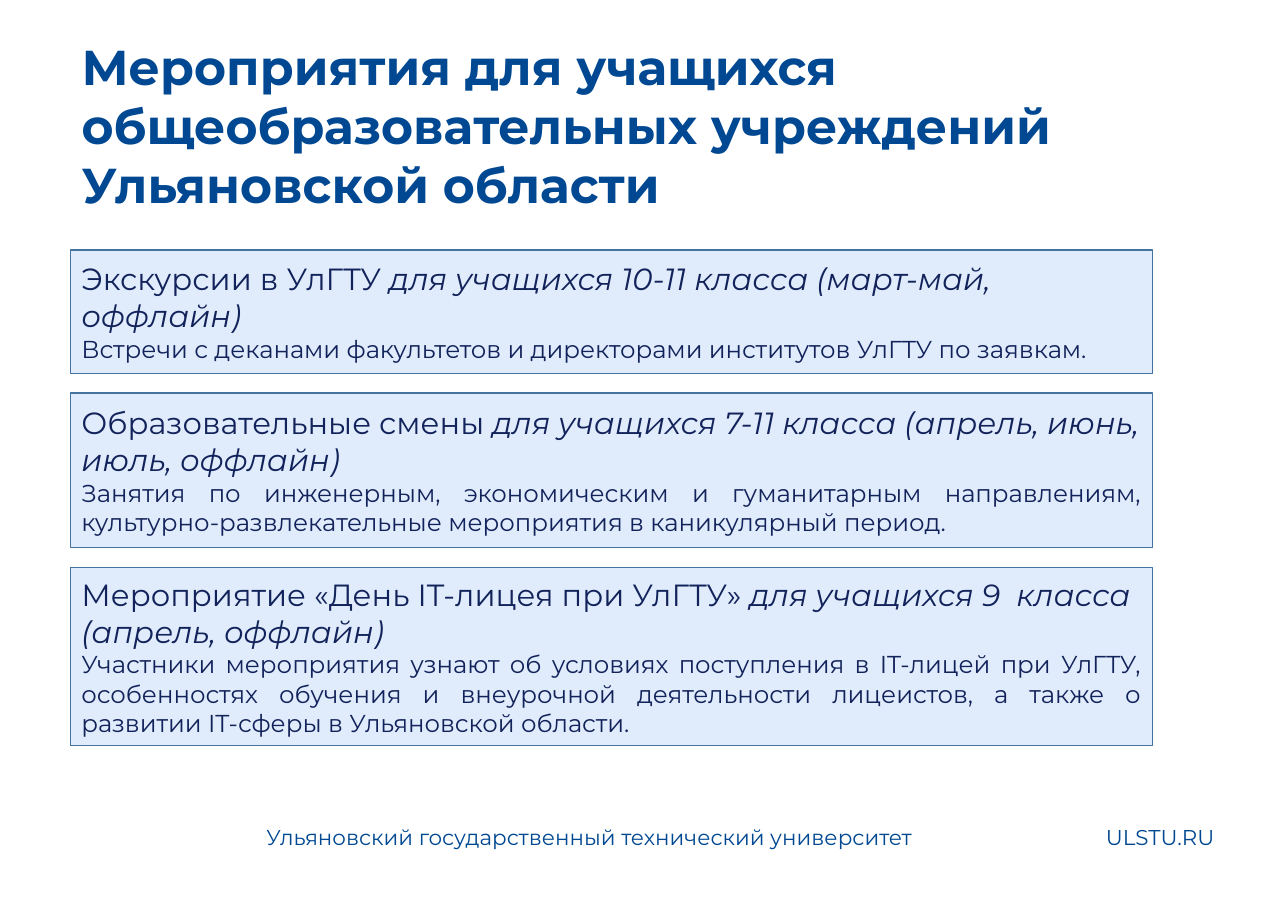
from dataclasses import dataclass

from lxml import etree
from pptx import Presentation
from pptx.dml.color import RGBColor
from pptx.enum.shapes import MSO_SHAPE
from pptx.enum.text import MSO_ANCHOR as ANCHOR, MSO_AUTO_SIZE as AUTO, PP_ALIGN as ALIGN
from pptx.oxml.ns import qn
from pptx.util import Pt


@dataclass(frozen=True)
class Theme:
    font: str = "Montserrat"
    brand: str = "004892"
    ink: str = "12225A"
    card: str = "9AC3F5"
    card_opacity: int = 30
    border: str = "43739E"
    title_size: int = 32
    heading_size: int = 20
    detail_size: int = 16
    footer_size: int = 14


THEME = Theme()
LEFT, CARD_TOP, CARD_WIDTH, CARD_GAP = 46.1, 163.4, 707.1, 13
FOOTER_TOP, FOOTER_HEIGHT = 535, 28

TITLE = "Мероприятия для учащихся общеобразовательных учреждений Ульяновской области"

# height, subject, audience and dates, details
EVENTS = [
    (80.6, "Экскурсии в УлГТУ ",
     "для учащихся 10-11 класса (март-май, оффлайн)",
     "Встречи с деканами факультетов и директорами институтов УлГТУ по заявкам."),
    (100.8, "Образовательные смены ",
     "для учащихся 7-11 класса (апрель, июнь, июль, оффлайн)",
     "Занятия по инженерным, экономическим и гуманитарным направлениям, "
     "культурно-развлекательные мероприятия в каникулярный период."),
    (116.6, "Мероприятие «День IT-лицея при УлГТУ» ",
     "для учащихся 9  класса (апрель, оффлайн)",
     "Участники мероприятия узнают об условиях поступления в IT-лицей при УлГТУ, "
     "особенностях обучения и внеурочной деятельности лицеистов, "
     "а также о развитии IT-сферы в Ульяновской области."),
]

# left, width, text
FOOTERS = [
    (167, 446.4, "Ульяновский государственный технический университет"),
    (715.7, 100.8, "ULSTU.RU"),
]


def add_text(p, text, *, size, color, bold=False, italic=False, align=ALIGN.LEFT):
    p.alignment = align
    r = p.add_run()
    r.text = text
    font = r.font
    font.name, font.size = THEME.font, Pt(size)
    font.bold, font.italic = bold, italic
    font.color.rgb = RGBColor.from_string(color)


def set_frame(tf, anchor):
    tf.word_wrap = True
    tf.auto_size = AUTO.NONE
    tf.vertical_anchor = anchor


def set_title(s):
    sp = s.shapes.title
    sp.left, sp.top, sp.width, sp.height = Pt(LEFT), Pt(20.5), Pt(781), Pt(140)
    set_frame(sp.text_frame, ANCHOR.TOP)
    add_text(sp.text_frame.paragraphs[0], TITLE,
             size=THEME.title_size, color=THEME.brand, bold=True)


def add_card(s, top, height, subject, audience, details):
    sp = s.shapes.add_shape(MSO_SHAPE.RECTANGLE, Pt(LEFT), Pt(top), Pt(CARD_WIDTH), Pt(height))
    sp.shadow.inherit = False
    sp.fill.solid()
    sp.fill.fore_color.rgb = RGBColor.from_string(THEME.card)
    color = sp.fill._xPr.find(qn("a:solidFill"))[0]
    etree.SubElement(color, qn("a:alpha"), val=str(THEME.card_opacity * 1000))
    sp.line.color.rgb = RGBColor.from_string(THEME.border)
    sp.line.width = Pt(1)

    tf = sp.text_frame
    set_frame(tf, ANCHOR.MIDDLE)
    heading = tf.paragraphs[0]
    add_text(heading, subject, size=THEME.heading_size, color=THEME.ink)
    add_text(heading, audience, size=THEME.heading_size, color=THEME.ink, italic=True)
    add_text(tf.add_paragraph(), details,
             size=THEME.detail_size, color=THEME.ink, align=ALIGN.JUSTIFY)


def add_footer(s, left, width, text):
    sp = s.shapes.add_textbox(Pt(left), Pt(FOOTER_TOP), Pt(width), Pt(FOOTER_HEIGHT))
    set_frame(sp.text_frame, ANCHOR.TOP)
    add_text(sp.text_frame.paragraphs[0], text, size=THEME.footer_size, color=THEME.brand)


def main():
    prs = Presentation()
    prs.slide_width, prs.slide_height = Pt(841.7), Pt(595.4)
    s = prs.slides.add_slide(prs.slide_layouts[5])
    set_title(s)
    top = CARD_TOP
    for height, *texts in EVENTS:
        add_card(s, top, height, *texts)
        top += height + CARD_GAP
    for footer in FOOTERS:
        add_footer(s, *footer)
    prs.save("out.pptx")


if __name__ == "__main__":
    main()
